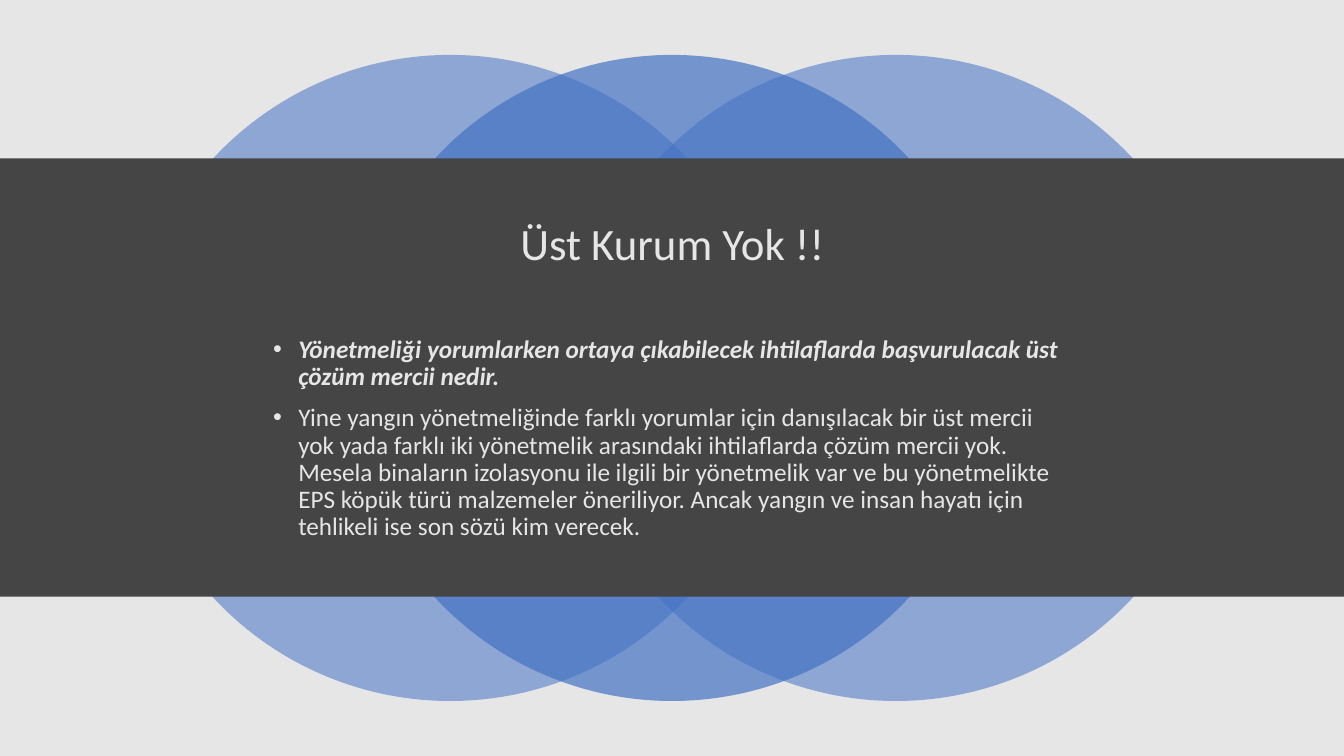
from lxml.etree import SubElement
from pptx import Presentation
from pptx.dml.color import RGBColor
from pptx.enum.shapes import MSO_SHAPE
from pptx.enum.text import MSO_ANCHOR, MSO_AUTO_SIZE, PP_ALIGN
from pptx.oxml.ns import qn
from pptx.util import Inches, Pt

DARK = RGBColor(0x45, 0x45, 0x45)
LIGHT = RGBColor(0xE7, 0xE6, 0xE6)
BLUE = RGBColor(0x44, 0x72, 0xC4)
WIDTH, HEIGHT = 13.33, 7.5
DIAMETER = 6.41
BAND_TOP, BAND_HEIGHT = 1.57, 4.35


def add_filled_shape(slide, preset, left, top, width, height, color, opacity=100):
    shape = slide.shapes.add_shape(
        preset, Inches(left), Inches(top), Inches(width), Inches(height))
    shape.shadow.inherit = False
    shape.fill.solid()
    shape.fill.fore_color.rgb = color
    shape.line.fill.background()
    if opacity < 100:
        color_element = shape.element.spPr.find(qn("a:solidFill"))[0]
        SubElement(color_element, qn("a:alpha"), val=str(opacity * 1000))


def format_paragraph(paragraph, size, emphasis=False):
    paragraph.line_spacing = 0.9
    for run in paragraph.runs:
        run.font.name = "Calibri"
        run.font.size = Pt(size)
        run.font.color.rgb = LIGHT
        run.font.bold = emphasis
        run.font.italic = emphasis


presentation = Presentation()
presentation.slide_width = Inches(WIDTH)
presentation.slide_height = Inches(HEIGHT)
slide = presentation.slides.add_slide(presentation.slide_layouts[5])
slide.background.fill.solid()
slide.background.fill.fore_color.rgb = DARK

add_filled_shape(slide, MSO_SHAPE.RECTANGLE, 0, 0, WIDTH, HEIGHT, LIGHT)
for left, opacity in [(1.26, 55), (5.68, 55), (3.46, 70)]:
    add_filled_shape(slide, MSO_SHAPE.OVAL, left, (HEIGHT - DIAMETER) / 2,
                     DIAMETER, DIAMETER, BLUE, opacity)
add_filled_shape(slide, MSO_SHAPE.RECTANGLE, 0, BAND_TOP, WIDTH, BAND_HEIGHT, DARK)

title = slide.shapes.title
title.element.getparent().append(title.element)
title.left, title.top = Inches(0.92), Inches(1.93)
title.width, title.height = Inches(11.5), Inches(1.02)
title.text_frame.text = "Üst Kurum Yok !!"
title.text_frame.auto_size = MSO_AUTO_SIZE.NONE
title.text_frame.vertical_anchor = MSO_ANCHOR.MIDDLE
title.text_frame.paragraphs[0].alignment = PP_ALIGN.CENTER
format_paragraph(title.text_frame.paragraphs[0], 32)

body = slide.shapes.add_textbox(Inches(2.61), Inches(3.29), Inches(8.12), Inches(2.31))
body.text_frame.word_wrap = True
body.text_frame.text = "\n".join([
    "Yönetmeliği yorumlarken ortaya çıkabilecek ihtilaflarda başvurulacak "
    "üst çözüm mercii nedir.",
    "Yine yangın yönetmeliğinde farklı yorumlar için danışılacak bir üst mercii "
    "yok yada farklı iki yönetmelik arasındaki ihtilaflarda çözüm mercii yok. "
    "Mesela binaların izolasyonu ile ilgili bir yönetmelik var ve bu yönetmelikte "
    "EPS köpük türü malzemeler öneriliyor. Ancak yangın ve insan hayatı için "
    "tehlikeli ise son sözü kim verecek.",
])
for index, paragraph in enumerate(body.text_frame.paragraphs):
    format_paragraph(paragraph, 18, emphasis=index == 0)
    paragraph.alignment = PP_ALIGN.LEFT
    paragraph.space_before = Pt(10)
    properties = paragraph._p.get_or_add_pPr()
    properties.set("marL", str(Inches(0.25)))
    properties.set("indent", str(Inches(-0.25)))
    SubElement(properties, qn("a:buFont"), typeface="Arial")
    SubElement(properties, qn("a:buChar"), char="•")

presentation.save("out.pptx")
